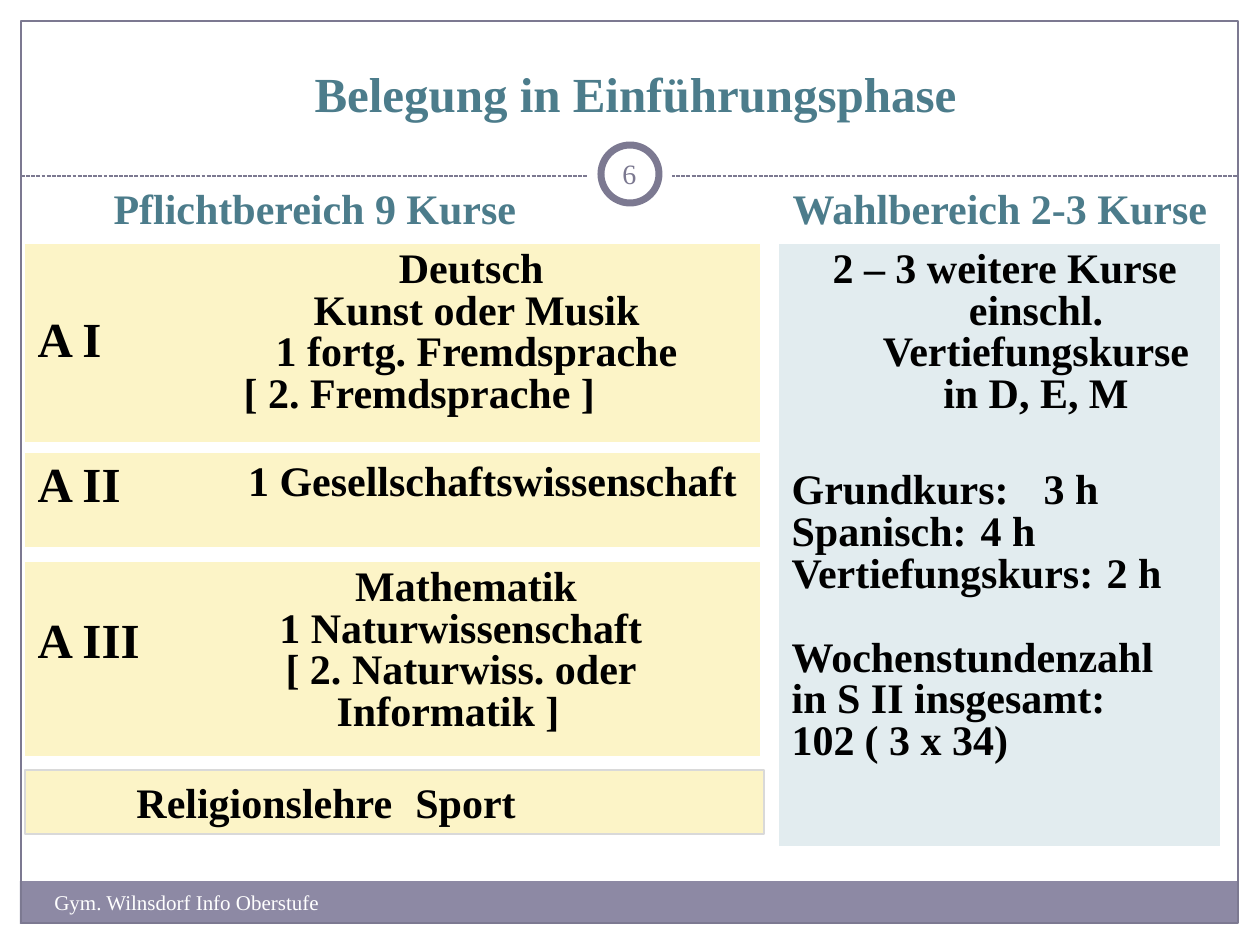
from lxml import etree
from pptx import Presentation
from pptx import util as u
from pptx.dml.color import RGBColor
from pptx.enum import dml, shapes, text
from pptx.oxml.ns import qn

CENTER, LEFT = text.PP_ALIGN.CENTER, text.PP_ALIGN.LEFT
TEAL, LINK, VIOLET, BAR = "4C7C8B", "00C8C3", "7C7991", "8D89A4"
YELLOW, MIST, BLACK, WHITE = "FCF4C7", "E2ECEF", "000000", "FFFFFF"
NO_GRID_STYLE = "{2D5ABB26-0587-4C30-8999-92F81FD0307C}"


def px(value):
    return u.Emu(round(value * 914400 / 126))


def color(value):
    return RGBColor.from_string(value)


class SlideBuilder:
    font = "Times New Roman"

    def __init__(self, presentation):
        self.slide = presentation.slides.add_slide(presentation.slide_layouts[5])

    def style(self, font, size, ink, bold=True):
        font.name, font.size, font.bold = self.font, u.Pt(size), bold
        font.color.rgb = color(ink)

    def fill_paragraph(self, paragraph, words, size=24, ink=BLACK, bold=True,
                       align=CENTER, spacing=None, before=0, margin=0, indent=0,
                       tab=None, number=None, blank_line=False):
        """Set text and format; blank_line ends it with an underlined tab."""
        properties = paragraph._p.get_or_add_pPr()
        properties.set("marL", str(px(margin)))
        properties.set("indent", str(px(indent)))
        if number:
            etree.SubElement(properties, qn("a:buAutoNum"), type="arabicPlain",
                             startAt=str(number))
        if tab:
            tabs = etree.SubElement(properties, qn("a:tabLst"))
            etree.SubElement(tabs, qn("a:tab"), pos=str(px(tab)), algn="l")
        paragraph.alignment = align
        paragraph.space_before = u.Pt(before)
        if spacing:
            paragraph.line_spacing = spacing
        paragraph.add_run().text = words
        self.style(paragraph.font, size, ink, bold)
        if blank_line:
            blank = paragraph.add_run()
            blank.text = "\t"
            self.style(blank.font, 20, LINK)
            blank.font.underline = True

    def title(self, words, left, top, width, height):
        title = self.slide.shapes.title
        title.left, title.top, title.width, title.height = map(
            px, (left, top, width, height))
        title.text_frame.vertical_anchor = text.MSO_ANCHOR.MIDDLE
        self.fill_paragraph(title.text_frame.paragraphs[0], words, 28, TEAL)

    def label(self, words, left, top, width, height, anchor=text.MSO_ANCHOR.MIDDLE,
              **options):
        box = self.slide.shapes.add_textbox(*map(px, (left, top, width, height)))
        box.text_frame.word_wrap = True
        box.text_frame.vertical_anchor = anchor
        self.fill_paragraph(box.text_frame.paragraphs[0], words, **options)

    def shape(self, kind, left, top, width, height, fill=None, line=None, weight=0.75):
        shape = self.slide.shapes.add_shape(kind, *map(px, (left, top, width, height)))
        shape.shadow.inherit = False
        if fill:
            shape.fill.solid()
            shape.fill.fore_color.rgb = color(fill)
        else:
            shape.fill.background()
        if line:
            shape.line.color.rgb = color(line)
            shape.line.width = u.Pt(weight)
        else:
            shape.line.fill.background()
        return shape

    def dashed_line(self, left, right, y):
        line = self.slide.shapes.add_connector(
            shapes.MSO_CONNECTOR.STRAIGHT, px(left), px(y), px(right), px(y))
        line.line.color.rgb = color(VIOLET)
        line.line.width = u.Pt(0.75)
        line.line.dash_style = dml.MSO_LINE.SQUARE_DOT
        etree.SubElement(line._element.spPr, qn("a:effectLst"))

    def table(self, left, top, height, widths, fill, cells):
        """Add a one-row table; each cell is (top margin, paragraphs)."""
        table = self.slide.shapes.add_table(
            1, len(widths), px(left), px(top), px(sum(widths)), px(height)).table
        table.first_row = table.horz_banding = False
        table._tbl.tblPr.find(qn("a:tableStyleId")).text = NO_GRID_STYLE
        for index, (width, (margin_top, lines)) in enumerate(zip(widths, cells)):
            table.columns[index].width = px(width)
            cell = table.cell(0, index)
            cell.fill.solid()
            cell.fill.fore_color.rgb = color(fill)
            cell.margin_top = px(margin_top)
            for number, (words, options) in enumerate(lines):
                frame = cell.text_frame
                paragraph = frame.add_paragraph() if number else frame.paragraphs[0]
                self.fill_paragraph(paragraph, words, **options)


def main():
    presentation = Presentation()
    presentation.slide_width, presentation.slide_height = px(1260), px(945)
    builder = SlideBuilder(presentation)
    rectangle, ellipse = shapes.MSO_SHAPE.RECTANGLE, shapes.MSO_SHAPE.OVAL

    builder.shape(rectangle, 20, 881, 1217, 43, BAR)
    builder.shape(rectangle, 21, 21, 1217, 902, line=VIOLET)
    builder.dashed_line(21, 1238, 176)
    builder.shape(ellipse, 588, 132, 84, 84, WHITE)
    builder.shape(ellipse, 601, 145, 58, 58, WHITE, VIOLET, 4)
    builder.title("Belegung in Einführungsphase", 105, 57, 1061, 72)

    tight = {"spacing": 0.9}
    tight_left = {"spacing": 0.9, "align": LEFT}
    hanging = {"spacing": 0.9, "margin": 73, "indent": -73}
    hours = {**tight_left, "tab": 321}
    groups = [
        ("A I", 244, 198, (168, 567), 70, 6, [
            ("Deutsch ", tight),
            ("Kunst oder Musik", tight),
            ("1 fortg. Fremdsprache", tight),
            ("[ 2. Fremdsprache ]",
             {**tight_left, "indent": 38, "tab": 503, "blank_line": True})]),
        ("A II", 453, 94, (200, 535), 6, 6, [("1 Gesellschaftswissenschaft", {})]),
        ("A III", 562, 194, (147, 588), 53, 6, [
            ("Mathematik", tight),
            ("1 Naturwissenschaft ", tight),
            ("[ 2. Naturwiss. oder ", tight),
            ("Informatik ]",
             {**tight_left, "indent": 152, "tab": 410, "blank_line": True})]),
    ]
    for name, top, height, widths, name_margin, margin, courses in groups:
        heading = [(name, {"size": 28, "align": LEFT})]
        builder.table(25, top, height, widths, YELLOW,
                      [(name_margin, heading), (margin, courses)])

    builder.table(779, 244, 602, (441,), MIST, [(6, [
        (" 2 – 3 weitere Kurse einschl. Vertiefungskurse in D, E, M", hanging),
        ("Grundkurs:\t3 h", {**hours, "before": 31}),
        ("Spanisch:\t4 h", hours),
        ("Vertiefungskurs:\t2 h", hours),
        ("Wochenstundenzahl", {**tight_left, "before": 24}),
        ("in S II insgesamt:", tight_left),
        ("( 3 x 34)", {**hanging, "align": LEFT, "number": 102})])])

    subjects = builder.shape(rectangle, 25, 770, 739, 64, YELLOW, "D9D9D9")
    builder.fill_paragraph(subjects.text_frame.paragraphs[0], "Religionslehre\tSport",
                           align=LEFT, indent=99, tab=513)

    for words, left in (("Pflichtbereich 9 Kurse", 84), ("Wahlbereich 2-3 Kurse", 769)):
        builder.label(words, left, 176, 462, 64, ink=TEAL)
    builder.label("6", 598, 143, 63, 60, size=16, ink="7B7890", bold=False)
    builder.label("Gym. Wilnsdorf Info Oberstufe", 42, 883, 494, 50,
                  anchor=text.MSO_ANCHOR.TOP, size=12, ink=WHITE, bold=False, align=LEFT)
    presentation.save("out.pptx")


if __name__ == "__main__":
    main()
